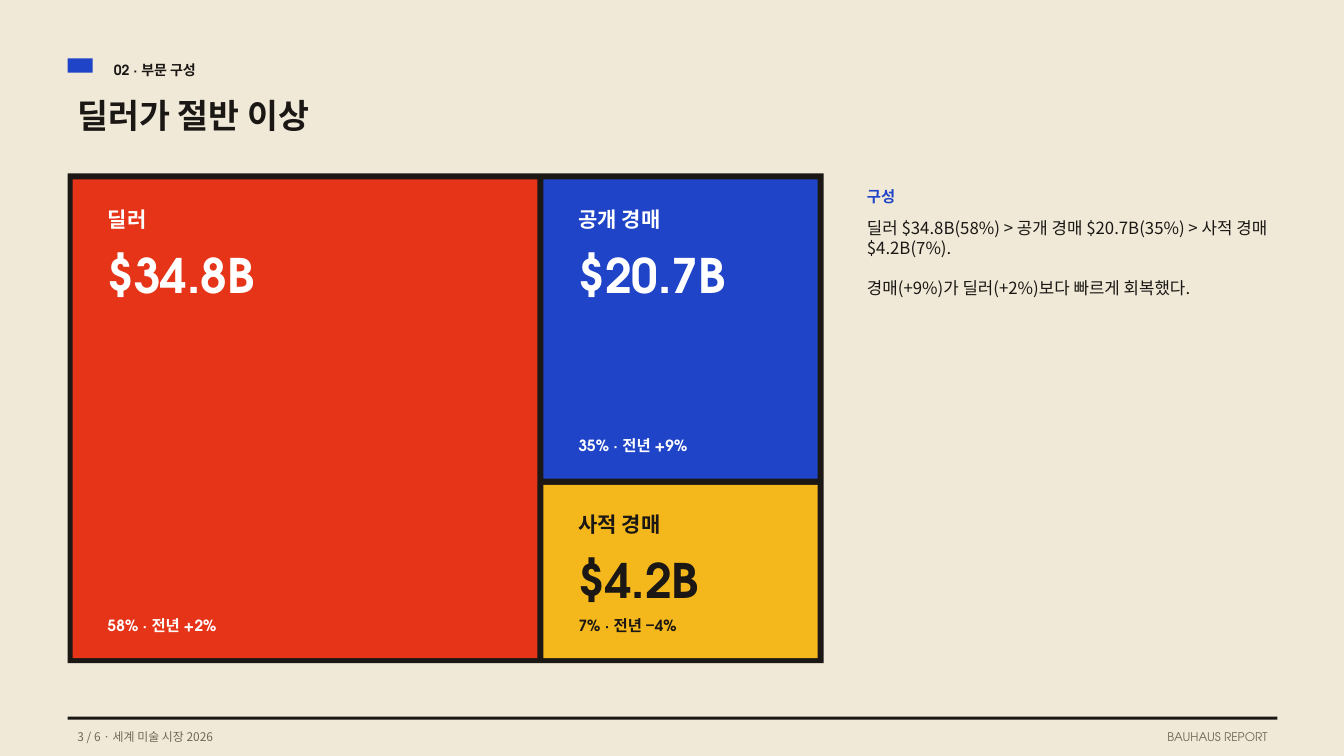
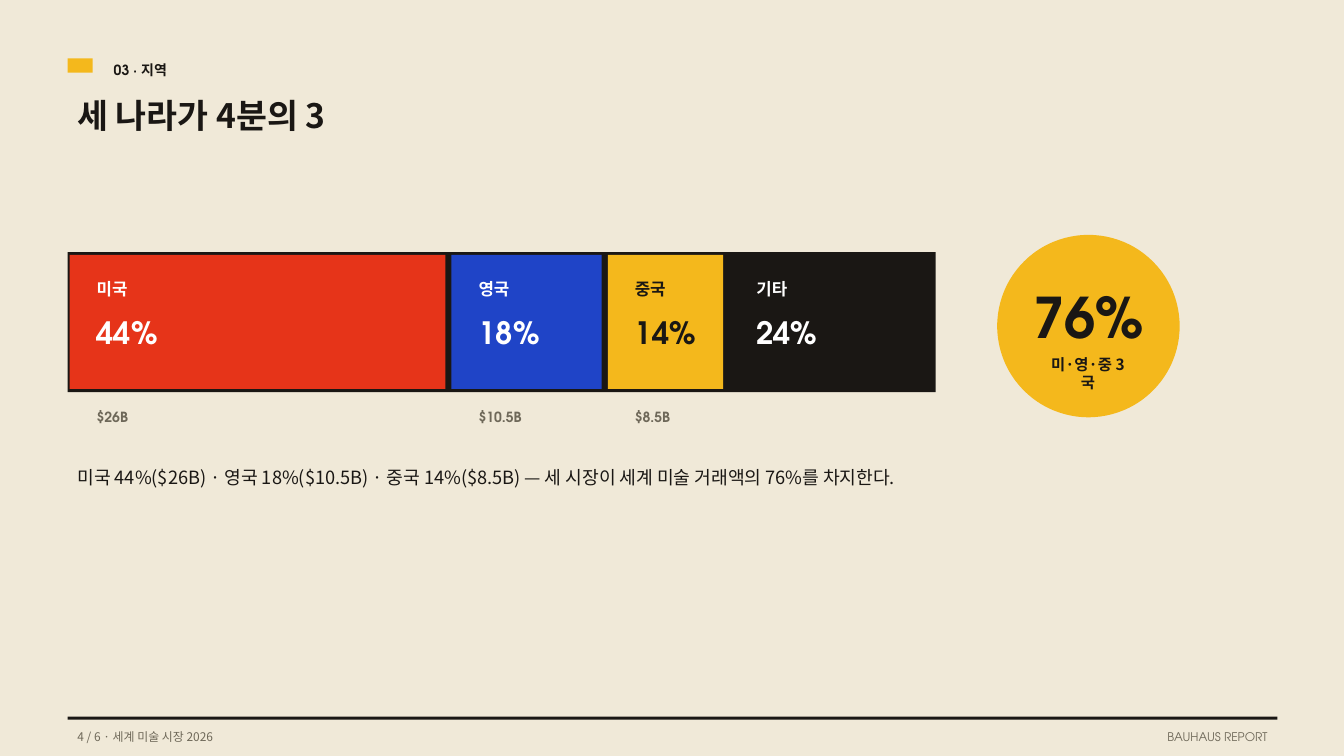
from dataclasses import dataclass

from pptx import Presentation
from pptx.dml.color import RGBColor
from pptx.enum.shapes import MSO_SHAPE
from pptx.enum.text import MSO_AUTO_SIZE, PP_ALIGN
from pptx.util import Inches, Pt

# Shared palette, fonts and margins
PAPER, INK, GREY, WHITE = "F0E9D8", "1A1714", "6E6859", "FFFFFF"
RED, BLUE, YELLOW = "E63419", "1F44C7", "F4B81C"
KR, GEO = "Noto Sans CJK KR", "TeX Gyre Adventor"
LEFT, WIDTH = 0.67, 12


@dataclass
class Tile:
    x: float
    y: float
    w: float
    h: float
    fill: str
    ink: str
    name: str
    name_w: float
    value: str
    value_w: float
    note: str
    note_w: float


@dataclass
class Country:
    name: str
    share: int
    fill: str
    ink: str
    sales: str = ""
    sales_w: float = 0


def rgb(color: str) -> RGBColor:
    return RGBColor.from_string(color)


def add_block(s, x: float, y: float, w: float, h: float, fill: str,
              kind=MSO_SHAPE.RECTANGLE) -> None:
    sp = s.shapes.add_shape(kind, Inches(x), Inches(y), Inches(w), Inches(h))
    sp.shadow.inherit = False
    sp.fill.solid()
    sp.fill.fore_color.rgb = rgb(fill)
    sp.line.fill.background()


def add_text(s, x: float, y: float, w: float, text: str, size: float,
             font: str = KR, color: str = INK, bold: bool = True,
             align=PP_ALIGN.LEFT, wrap: bool = False, lines: int = 1,
             gap: float = 0) -> None:
    """Each line of text is a paragraph; gap is the space between them."""
    h = lines * size * 1.2 / 72 + 0.1
    sp = s.shapes.add_textbox(Inches(x), Inches(y), Inches(w), Inches(h))
    tf = sp.text_frame
    tf.word_wrap = wrap
    tf.auto_size = MSO_AUTO_SIZE.SHAPE_TO_FIT_TEXT
    for i, part in enumerate(text.split("\n")):
        p = tf.add_paragraph() if i else tf.paragraphs[0]
        p.alignment = align
        if i:
            p.space_before = Pt(gap)
        r = p.add_run()
        r.text = part
        r.font.name = font
        r.font.size = Pt(size)
        r.font.bold = bold
        r.font.color.rgb = rgb(color)


def add_page(prs, page: int, accent: str, section: str, section_w: float,
             title: str, title_w: float):
    s = prs.slides.add_slide(prs.slide_layouts[6])
    s.background.fill.solid()
    s.background.fill.fore_color.rgb = rgb(PAPER)
    # Header
    add_block(s, LEFT, 0.58, 0.25, 0.14, accent)
    add_text(s, 1.03, 0.56, section_w, section, 10, GEO)
    add_text(s, LEFT, 0.89, title_w, title, 24)
    # Footer
    add_block(s, LEFT, 7.11, WIDTH, 0.03, INK)
    add_text(s, LEFT, 7.19, 1.67, f"{page} / 6 · 세계 미술 시장 2026", 8.5,
             color=GREY, bold=False)
    add_text(s, 11.46, 7.19, 1.21, "BAUHAUS REPORT", 8.5, GEO, GREY, False,
             PP_ALIGN.RIGHT)
    return s


def add_tile(s, t: Tile) -> None:
    x = t.x + 0.25
    add_block(s, t.x, t.y, t.w, t.h, t.fill)
    add_text(s, x, t.y + 0.22, t.name_w, t.name, 15, KR, t.ink)
    add_text(s, x, t.y + 0.61, t.value_w, t.value, 34, GEO, t.ink)
    add_text(s, x, t.y + t.h - 0.47, t.note_w, t.note, 11, GEO, t.ink, wrap=True)


def build_sectors(prs) -> None:
    s = add_page(prs, 3, BLUE, "02 · 부문 구성", 1.08, "딜러가 절반 이상", 2.8)
    # Treemap on a dark frame
    add_block(s, LEFT, 1.72, 7.5, 4.86, INK)
    for t in (
        Tile(0.72, 1.78, 4.61, 4.75, RED, WHITE, "딜러", 0.62,
             "$34.8B", 1.68, "58% · 전년 +2%", 1.31),
        Tile(5.39, 1.78, 2.72, 2.97, BLUE, WHITE, "공개 경매", 1.12,
             "$20.7B", 1.68, "35% · 전년 +9%", 1.31),
        Tile(5.39, 4.81, 2.72, 1.72, YELLOW, INK, "사적 경매", 1.12,
             "$4.2B", 1.41, "7% · 전년 −4%", 1.22),
    ):
        add_tile(s, t)
    # Commentary
    add_text(s, 8.5, 1.81, 0.51, "구성", 11, GEO, BLUE)
    add_text(s, 8.5, 2.11, 4.17,
             "딜러 $34.8B(58%) > 공개 경매 $20.7B(35%) > 사적 경매 $4.2B(7%).\n"
             "경매(+9%)가 딜러(+2%)보다 빠르게 회복했다.",
             12, bold=False, wrap=True, lines=4, gap=14.4)


def build_regions(prs) -> None:
    s = add_page(prs, 4, YELLOW, "03 · 지역", 0.76, "세 나라가 4분의 3", 2.97)
    # Stacked bar: widths follow the shares
    bar_w, seam = 8.61, 0.06
    add_block(s, LEFT, 2.5, bar_w, 1.39, INK)
    x = 0.69
    for c in (
        Country("미국", 44, RED, WHITE, "$26B", 0.52),
        Country("영국", 18, BLUE, WHITE, "$10.5B", 0.64),
        Country("중국", 14, YELLOW, INK, "$8.5B", 0.56),
        Country("기타", 24, INK, WHITE),
    ):
        step = bar_w * c.share / 100
        text_x = x + 0.17
        add_block(s, x, 2.53, step - seam, 1.33, c.fill)
        add_text(s, text_x, 2.72, 0.54, c.name, 12, KR, c.ink)
        add_text(s, text_x, 3.06, 0.81, f"{c.share}%", 22, GEO, c.ink)
        if c.sales:
            add_text(s, text_x, 4, c.sales_w, c.sales, 10, GEO, GREY)
        x += step
    # Total badge
    add_block(s, 9.89, 2.33, 1.81, 1.81, YELLOW, MSO_SHAPE.OVAL)
    add_text(s, 10.14, 2.75, 1.31, "76%", 40, GEO, align=PP_ALIGN.CENTER)
    add_text(s, 10.27, 3.47, 1.04, "미·영·중 3국", 11,
             align=PP_ALIGN.CENTER, wrap=True)
    # Summary
    add_text(s, LEFT, 4.58, WIDTH,
             "미국 44%($26B) · 영국 18%($10.5B) · 중국 14%($8.5B) — "
             "세 시장이 세계 미술 거래액의 76%를 차지한다.",
             13, bold=False, wrap=True)


def main() -> None:
    prs = Presentation()
    prs.slide_width, prs.slide_height = Inches(13.33), Inches(7.5)
    build_sectors(prs)
    build_regions(prs)
    prs.save("out.pptx")


if __name__ == "__main__":
    main()
